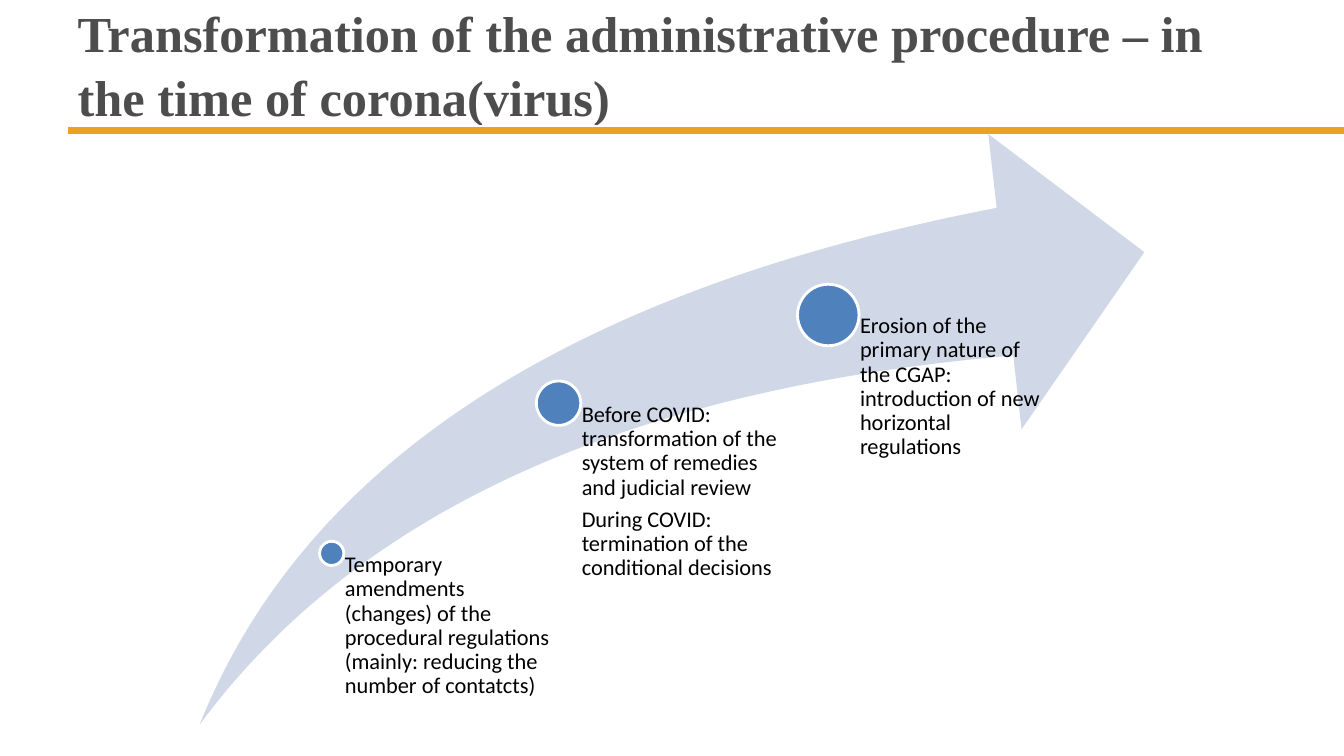
from dataclasses import dataclass

from pptx import Presentation
from pptx.dml.color import RGBColor
from pptx.enum.shapes import MSO_SHAPE
from pptx.enum.text import MSO_ANCHOR, MSO_AUTO_SIZE, PP_ALIGN
from pptx.shapes.autoshape import Shape
from pptx.slide import Slide
from pptx.text.text import TextFrame
from pptx.util import Emu, Pt

RECTANGLE = MSO_SHAPE.RECTANGLE
ELLIPSE = MSO_SHAPE.OVAL
SWOOSH = MSO_SHAPE.SWOOSH_ARROW
TOP = MSO_ANCHOR.TOP
MIDDLE = MSO_ANCHOR.MIDDLE
LEFT = PP_ALIGN.LEFT
NO_FIT = MSO_AUTO_SIZE.NONE

EMU_PER_PX = 9144
TITLE_ONLY = 5
SWOOSH_BOTTOM = 719
INSET_RATIO = 0.53


@dataclass(frozen=True)
class Theme:
    title_font: str = "Times New Roman"
    body_font: str = "Calibri"
    title_size: float = 36
    body_size: float = 16
    rule_line: float = 0.75
    marker_line: float = 2
    title_color: str = "4D4D4D"
    text_color: str = "000000"
    rule_color: str = "EDA021"
    arrow_color: str = "D0D8E8"
    marker_color: str = "4F81BD"
    white: str = "FFFFFF"


@dataclass(frozen=True)
class Area:
    left: int
    top: int
    width: int
    height: int


@dataclass(frozen=True)
class Milestone:
    center_x: int
    center_y: int
    diameter: int
    text_width: int
    paragraphs: tuple[str, ...]


THEME = Theme()
TITLE = "Transformation of the administrative procedure – in the time of corona(virus)"
TITLE_AREA = Area(67, 0, 1200, 125)
RULE_AREA = Area(67, 125, 1267, 8)
SWOOSH_AREA = Area(198, 133, 937, SWOOSH_BOTTOM - 133)
MILESTONES = (
    Milestone(329, 549, 24, 218, (
        "Temporary amendments (changes) of the procedural regulations "
        "(mainly: reducing the number of contatcts)",
    )),
    Milestone(554, 400, 44, 225, (
        "Before COVID: transformation of the system of remedies and judicial review",
        "During COVID: termination of the conditional decisions",
    )),
    Milestone(821, 312, 61, 225, (
        "Erosion of the primary nature of the CGAP: "
        "introduction of new horizontal regulations",
    )),
)


def px(length: int) -> Emu:
    return Emu(length * EMU_PER_PX)


def bounds(area: Area) -> tuple[Emu, Emu, Emu, Emu]:
    return px(area.left), px(area.top), px(area.width), px(area.height)


def apply(target: object, values: dict[str, object]) -> None:
    for name, value in values.items():
        setattr(target, name, value)


def write_paragraphs(
    frame: TextFrame,
    texts: tuple[str, ...],
    paragraph_format: dict[str, object],
    font_format: dict[str, object],
    color: str,
) -> None:
    for index, text in enumerate(texts):
        paragraph = frame.add_paragraph() if index else frame.paragraphs[0]
        apply(paragraph, paragraph_format)
        span = paragraph.add_run()
        span.text = text
        apply(span.font, font_format)
        span.font.color.rgb = RGBColor.from_string(color)


def add_figure(
    page: Slide, kind: MSO_SHAPE, area: Area, fill: str, line_width: float = 0
) -> Shape:
    figure = page.shapes.add_shape(kind, *bounds(area))
    figure.shadow.inherit = False
    figure.fill.solid()
    figure.fill.fore_color.rgb = RGBColor.from_string(fill)
    if line_width:
        figure.line.color.rgb = RGBColor.from_string(THEME.white)
        figure.line.width = Pt(line_width)
    else:
        figure.line.fill.background()
    return figure


def add_title(page: Slide) -> None:
    title = page.shapes.title
    apply(title, dict(zip(("left", "top", "width", "height"), bounds(TITLE_AREA))))
    apply(title.text_frame, {
        "word_wrap": True, "auto_size": NO_FIT, "vertical_anchor": MIDDLE,
    })
    write_paragraphs(
        title.text_frame,
        (TITLE,),
        {"alignment": LEFT, "line_spacing": 1.06},
        {"name": THEME.title_font, "size": Pt(THEME.title_size), "bold": True},
        THEME.title_color,
    )


def add_milestone(page: Slide, milestone: Milestone) -> None:
    diameter = milestone.diameter
    marker_area = Area(
        milestone.center_x - diameter // 2,
        milestone.center_y - diameter // 2,
        diameter,
        diameter,
    )
    add_figure(page, ELLIPSE, marker_area, THEME.marker_color, THEME.marker_line)
    text_area = Area(
        milestone.center_x,
        milestone.center_y,
        milestone.text_width,
        SWOOSH_BOTTOM - milestone.center_y,
    )
    box = page.shapes.add_textbox(*bounds(text_area))
    apply(box.text_frame, {
        "word_wrap": True,
        "auto_size": NO_FIT,
        "vertical_anchor": TOP,
        "margin_left": px(round(diameter * INSET_RATIO)),
        "margin_top": 0,
        "margin_right": 0,
        "margin_bottom": 0,
    })
    write_paragraphs(
        box.text_frame,
        milestone.paragraphs,
        {"alignment": LEFT, "line_spacing": 0.9, "space_after": Pt(6)},
        {"name": THEME.body_font, "size": Pt(THEME.body_size)},
        THEME.text_color,
    )


def main() -> None:
    deck = Presentation()
    apply(deck, {"slide_width": px(1333), "slide_height": px(750)})
    page = deck.slides.add_slide(deck.slide_layouts[TITLE_ONLY])
    add_figure(page, RECTANGLE, RULE_AREA, THEME.rule_color, THEME.rule_line)
    add_title(page)
    swoosh = add_figure(page, SWOOSH, SWOOSH_AREA, THEME.arrow_color)
    for index in range(2):
        swoosh.adjustments[index] = 0.25
    for milestone in MILESTONES:
        add_milestone(page, milestone)
    deck.save("out.pptx")


if __name__ == "__main__":
    main()
